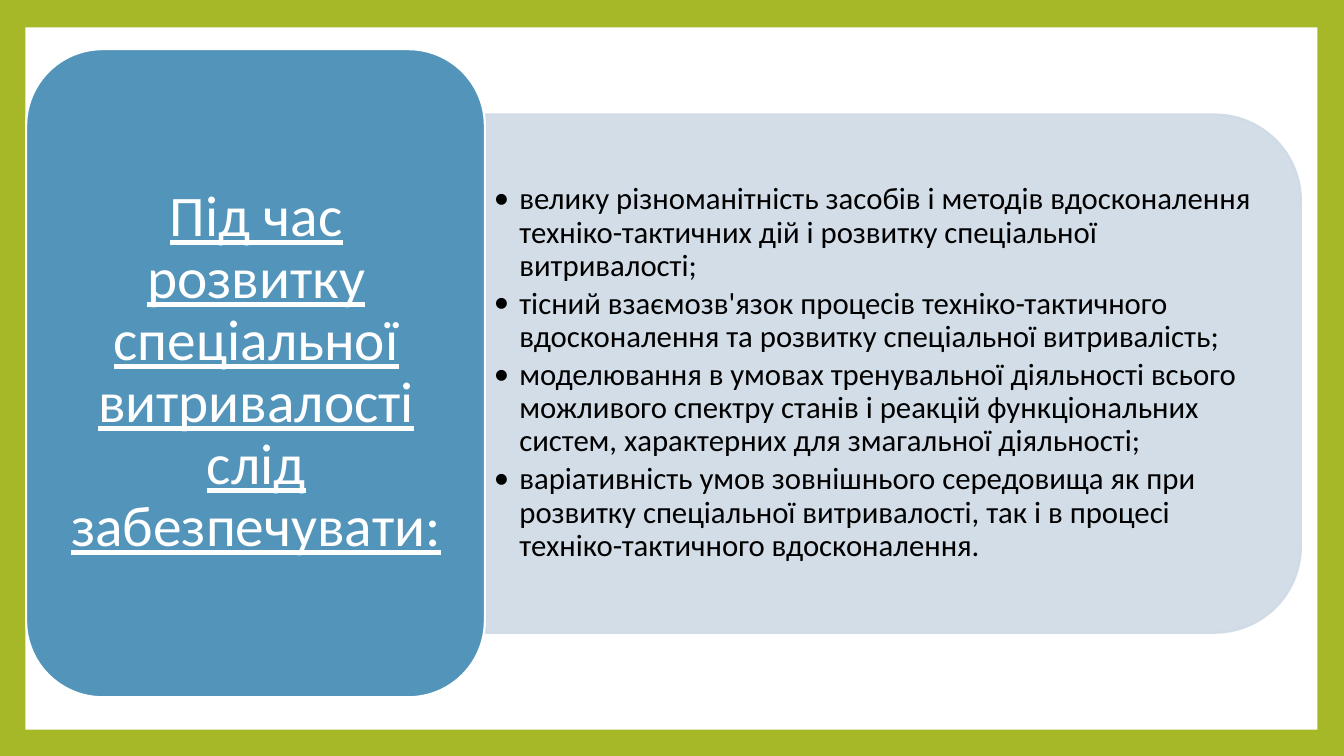
import pptx
import pptx.dml.color
import pptx.enum.shapes
import pptx.enum.text
import pptx.oxml
import pptx.oxml.ns
import pptx.util
from pptx.util import Cm

COLORS = {"green": "A6B727", "white": "FFFFFF", "blue": "418AB3",
          "pale": "CFDAE5", "black": "000000"}
TITLE = "Під час розвитку спеціальної витривалості слід забезпечувати:"
ITEMS = [
    "велику різноманітність засобів і методів вдосконалення техніко-тактичних дій "
    "і розвитку спеціальної витривалості;",
    "тісний взаємозв'язок процесів техніко-тактичного вдосконалення та розвитку "
    "спеціальної витривалість;",
    "моделювання в умовах тренувальної діяльності всього можливого спектру станів "
    "і реакцій функціональних систем, характерних для змагальної діяльності;",
    "варіативність умов зовнішнього середовища як при розвитку спеціальної "
    "витривалості, так і в процесі техніко-тактичного вдосконалення.",
]


def rgb(name):
    return pptx.dml.color.RGBColor.from_string(COLORS[name])


def add_child(parent, tag, **attrs):
    child = parent.makeelement(pptx.oxml.ns.qn(tag), attrs)
    parent.append(child)
    return child


def write(p, text, size, color, font="Calibri", underline=False, after=0, align=None):
    p.line_spacing = 0.9
    p.space_after = pptx.util.Pt(after)
    p.alignment = align
    r = p.add_run()
    r.text = text
    r.font.name = font
    r.font.size = pptx.util.Pt(size)
    r.font.underline = underline
    r.font.color.rgb = rgb(color)


class Deck:
    """Holds the presentation style and draws on the current slide."""

    def __init__(self):
        self.prs = pptx.Presentation()
        self.prs.slide_width, self.prs.slide_height = Cm(33.87), Cm(19.05)
        self.s = self.prs.slides.add_slide(self.prs.slide_layouts[6])
        self.shapes = pptx.enum.shapes.MSO_SHAPE

    def background(self, color):
        fill = self.s.background.fill
        fill.solid()
        fill.fore_color.rgb = rgb(color)

    def shape(self, kind, box, fill, line=None, opacity=100, line_opacity=100, rotation=0):
        sp = self.s.shapes.add_shape(kind, *map(Cm, box))
        sp.shadow.inherit = False
        sp.rotation = rotation
        sp.fill.solid()
        sp.fill.fore_color.rgb = rgb(fill)
        if line:
            sp.line.width = pptx.util.Pt(1.5)
            sp.line.color.rgb = rgb(line)
        else:
            sp.line.fill.background()
        for path_to_color, value in (("a:solidFill/a:srgbClr", opacity),
                                     ("a:ln/a:solidFill/a:srgbClr", line_opacity)):
            if value < 100:
                clr = sp._element.spPr.find(path_to_color, pptx.oxml.ns._nsmap)
                add_child(clr, "a:alpha", val=str(value * 1000))

    def text(self, box, paragraphs, margins, bullet=False, **style):
        tf = self.s.shapes.add_textbox(*map(Cm, box)).text_frame
        tf.word_wrap = True
        tf.vertical_anchor = pptx.enum.text.MSO_ANCHOR.MIDDLE
        tf.margin_left = tf.margin_right = Cm(margins[0])
        tf.margin_top = tf.margin_bottom = Cm(margins[1])
        for i, content in enumerate(paragraphs):
            p = tf.add_paragraph() if i else tf.paragraphs[0]
            write(p, content, **style)
            if bullet:
                pPr = p._p.get_or_add_pPr()
                pPr.set("marL", str(Cm(0.64)))
                pPr.set("indent", str(-Cm(0.64)))
                add_child(pPr, "a:buFont", typeface="Calibri")
                add_child(pPr, "a:buChar", char="•")


def main():
    deck = Deck()
    deck.background("green")
    deck.shape(deck.shapes.RECTANGLE, (0.64, 0.69, 32.56, 17.7), "white")
    deck.shape(deck.shapes.ROUND_2_SAME_RECTANGLE, (15.98, -0.86, 13.06, 20.55), "pale",
               line="pale", opacity=90, line_opacity=90, rotation=90)
    deck.text((12.22, 3.51, 19.91, 11.79), ITEMS, (0.23, 0.13), bullet=True,
              size=22, color="black", after=3.3)
    deck.shape(deck.shapes.ROUNDED_RECTANGLE, (0.66, 1.24, 11.56, 16.33), "blue",
               line="white", opacity=90)
    deck.text((1.24, 1.8, 10.44, 15.21), [TITLE], (0.43, 0.23), size=41, color="white",
              underline=True, after=14.35, align=pptx.enum.text.PP_ALIGN.CENTER)
    deck.prs.save("out.pptx")


if __name__ == "__main__":
    main()
